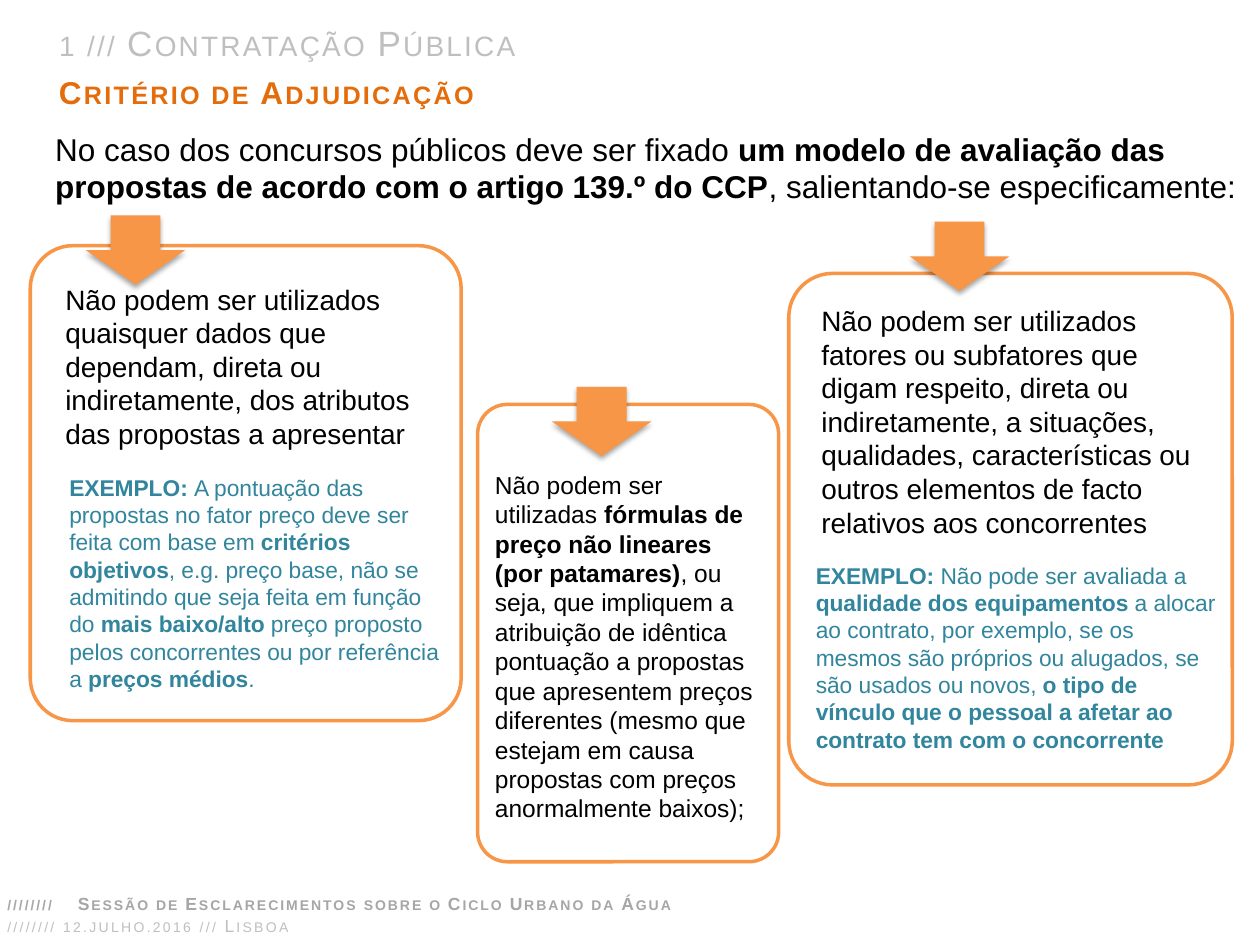
from dataclasses import dataclass

from lxml.etree import SubElement
from pptx import Presentation
from pptx.dml.color import RGBColor
from pptx.enum.shapes import MSO_SHAPE
from pptx.enum.text import MSO_ANCHOR, MSO_AUTO_SIZE, PP_ALIGN
from pptx.oxml.ns import qn
from pptx.util import Inches, Pt


@dataclass(frozen=True)
class Theme:
    font: str = "Arial"
    orange: str = "F79646"
    heading: str = "E46C0A"
    teal: str = "31859C"
    black: str = "000000"
    white: str = "FFFFFF"
    light_gray: str = "BFBFBF"
    gray: str = "A6A6A6"
    title_size: int = 20
    lead_size: int = 18
    card_size: int = 16
    narrow_size: int = 14
    example_size: int = 13
    footer_size: int = 10


THEME = Theme()
SLIDE_WIDTH, SLIDE_HEIGHT = 10, 7.5
ARROW_WIDTH, ARROW_HEIGHT = 0.79, 0.55
CORNER = 0.099

TITLE = "1 /// Contratação Pública"
SUBTITLE = "Critério de Adjudicação"
INTRO = ("No caso dos concursos públicos deve ser fixado **um modelo de avaliação das propostas "
         "de acordo com o artigo 139.º do CCP**, salientando-se especificamente:")
SESSION = "////////\tSessão de Esclarecimentos sobre o Ciclo Urbano da Água"
DATE_PLACE = "//////// 12.julho.2016 /// Lisboa"

CARDS = [
    {
        "frame": (3.79, 3.21, 2.39, 3.63),
        "arrow": (4.38, 3.07),
        "rule_frame": (3.83, 3.68, 2.26, 2.93),
        "rule_size": THEME.narrow_size,
        "rule": "Não podem ser utilizadas **fórmulas de preço não lineares (por patamares)**, ou seja, "
                "que impliquem a atribuição de idêntica pontuação a propostas que apresentem preços "
                "diferentes (mesmo que estejam em causa propostas com preços anormalmente baixos);",
    },
    {
        "frame": (0.24, 1.95, 3.42, 3.77),
        "arrow": (0.68, 1.71),
        "rule_frame": (0.42, 2.19, 3.06, 1.45),
        "rule_size": THEME.card_size,
        "rule": "Não podem ser utilizados quaisquer dados que dependam, direta ou indiretamente, "
                "dos atributos das propostas a apresentar",
        "example_frame": (0.35, 3.58, 3.36, 2.09),
        "example": "**EXEMPLO: **A pontuação das propostas no fator preço deve ser feita com base em "
                   "**critérios objetivos**, e.g. preço base, não se admitindo que seja feita em função "
                   "do **mais baixo/alto **preço proposto pelos concorrentes ou por referência a "
                   "**preços médios**.",
    },
    {
        "frame": (6.26, 2.17, 3.52, 4.06),
        "arrow": (7.22, 1.76),
        "rule_frame": (6.42, 2.36, 3.22, 1.99),
        "rule_size": THEME.card_size,
        "rule": "Não podem ser utilizados fatores ou subfatores que digam respeito, direta ou "
                "indiretamente, a situações, qualidades, características ou outros elementos de facto "
                "relativos aos concorrentes",
        "example_frame": (6.31, 4.53, 3.54, 1.37),
        "example": "**EXEMPLO: **Não pode ser avaliada a **qualidade dos equipamentos **a alocar ao "
                   "contrato, por exemplo, se os mesmos são próprios ou alugados, se são usados ou novos, "
                   "**o tipo de vínculo que o pessoal a afetar ao contrato tem com o concorrente**",
    },
]


def write(box, text, size, color=THEME.black, bold=False, spacing=None, after=0,
          anchor=MSO_ANCHOR.TOP, tab=None):
    frame = box.text_frame
    frame.word_wrap = True
    frame.auto_size = MSO_AUTO_SIZE.NONE
    frame.vertical_anchor = anchor
    para = frame.paragraphs[0]
    para.alignment = PP_ALIGN.LEFT
    para.space_after = Pt(after)
    if tab:
        stops = SubElement(para._p.get_or_add_pPr(), qn("a:tabLst"))
        SubElement(stops, qn("a:tab"), pos=str(Inches(tab)), algn="l")
    for index, part in enumerate(text.split("**")):
        if not part:
            continue
        span = para.add_run()
        span.text = part
        span.font.name = THEME.font
        span.font.size = Pt(size)
        span.font.bold = bold or index % 2 == 1
        span.font.color.rgb = RGBColor.from_string(color)
        if spacing:
            properties = span._r.get_or_add_rPr()
            properties.set("cap", "small")
            properties.set("spc", str(round(spacing * 100)))


def add_text(page, frame, text, size, **style):
    box = page.shapes.add_textbox(*map(Inches, frame))
    write(box, text, size, **style)


def add_preset(page, kind, frame, fill=None, line=None):
    shape = page.shapes.add_shape(kind, *map(Inches, frame))
    shape.shadow.inherit = False
    if fill:
        shape.fill.solid()
        shape.fill.fore_color.rgb = RGBColor.from_string(fill)
    else:
        shape.fill.background()
    if line:
        shape.line.color.rgb = RGBColor.from_string(line)
        shape.line.width = Pt(2)
    else:
        shape.line.fill.background()
    return shape


def add_arrow(page, left, top):
    arrow = add_preset(page, MSO_SHAPE.DOWN_ARROW, (left, top, ARROW_WIDTH, ARROW_HEIGHT), THEME.orange)
    effects = arrow._element.spPr.find(qn("a:effectLst"))
    shadow = SubElement(effects, qn("a:outerShdw"), blurRad=str(Pt(3.1)), dist=str(Pt(1.8)),
                        dir="5400000", rotWithShape="0")
    tint = SubElement(shadow, qn("a:srgbClr"), val=THEME.black)
    SubElement(tint, qn("a:alpha"), val="35000")


def add_card(page, card):
    panel = add_preset(page, MSO_SHAPE.ROUNDED_RECTANGLE, card["frame"], THEME.white, THEME.orange)
    panel.adjustments[0] = CORNER
    add_text(page, card["rule_frame"], card["rule"], card["rule_size"])
    if "example" in card:
        example = add_preset(page, MSO_SHAPE.ROUNDED_RECTANGLE, card["example_frame"])
        write(example, card["example"], THEME.example_size, color=THEME.teal, anchor=MSO_ANCHOR.MIDDLE)
    add_arrow(page, *card["arrow"])


def main():
    deck = Presentation()
    deck.slide_width, deck.slide_height = Inches(SLIDE_WIDTH), Inches(SLIDE_HEIGHT)
    page = deck.slides.add_slide(deck.slide_layouts[5])

    title = page.shapes.title
    title.left, title.top, title.width, title.height = map(Inches, (0.37, 0.12, 9.63, 0.44))
    write(title, TITLE, THEME.title_size, color=THEME.light_gray, spacing=1.3, after=6)
    add_text(page, (0.37, 0.53, 7.24, 0.4), SUBTITLE, THEME.lead_size,
             color=THEME.heading, bold=True, spacing=1.3, after=6)
    add_text(page, (0.34, 0.98, 9.66, 0.71), INTRO, THEME.lead_size)

    for card in CARDS:
        add_card(page, card)

    add_text(page, (-0.04, 7.21, 7.74, 0.27), DATE_PLACE, THEME.footer_size,
             color=THEME.light_gray, spacing=1.3)
    add_text(page, (-0.04, 7.04, 7.74, 0.27), SESSION, THEME.footer_size,
             color=THEME.gray, bold=True, spacing=1.1, tab=0.56)
    deck.save("out.pptx")


if __name__ == "__main__":
    main()
